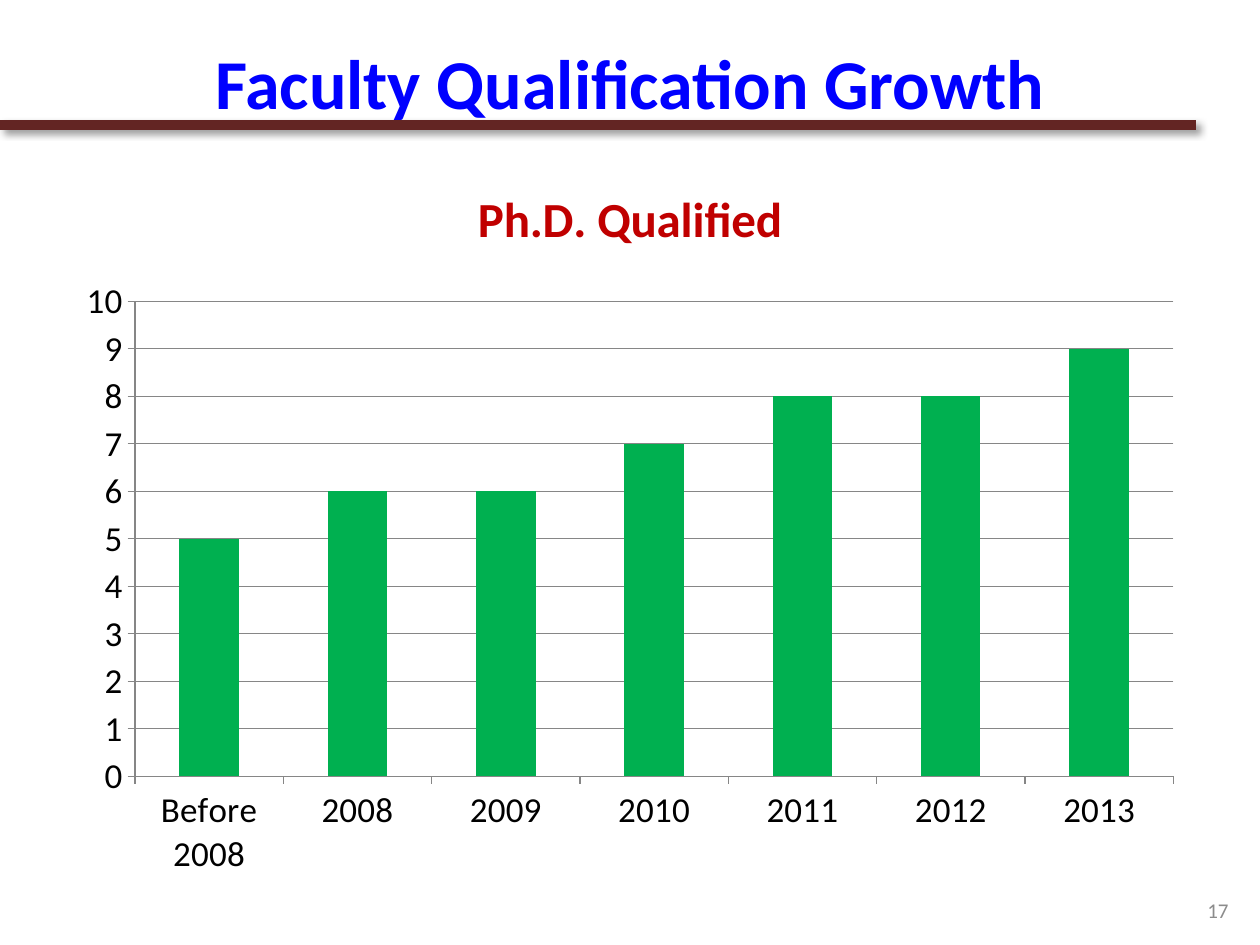
from lxml import etree
from pptx import Presentation
from pptx.chart.data import CategoryChartData
from pptx.dml.color import RGBColor
from pptx.enum.chart import XL_CHART_TYPE, XL_TICK_MARK
from pptx.enum.shapes import MSO_CONNECTOR
from pptx.enum.text import MSO_ANCHOR, PP_ALIGN
from pptx.oxml.ns import qn
from pptx.util import Emu, Pt

COLUMNS = XL_CHART_TYPE.COLUMN_CLUSTERED
OUTSIDE, NO_TICK = XL_TICK_MARK.OUTSIDE, XL_TICK_MARK.NONE
STRAIGHT = MSO_CONNECTOR.STRAIGHT
MIDDLE = MSO_ANCHOR.MIDDLE
CENTER, RIGHT = PP_ALIGN.CENTER, PP_ALIGN.RIGHT

# Content
HEADING = "Faculty Qualification Growth"
CHART_HEADING = "Ph.D. Qualified"
PAGE_NUMBER = "17"
QUALIFIED = {"Before 2008": 5, "2008": 6, "2009": 6, "2010": 7,
             "2011": 8, "2012": 8, "2013": 9}

# Look and places, in px
FONT = "Calibri"
COLORS = {"heading": "0000FF", "rule": "632523", "chart_heading": "C00000",
          "column": "00B050", "label": "000000", "axis": "868686",
          "page": "8C8C8C", "shadow": "000000"}
PX_PER_INCH = 126
SLIDE = (1260, 945)
HEADING_BOX = (63, 38, 1134, 87)
RULE = (0, 125, 1196, 125)
CHART_BOX = (64, 155, 1132, 735)
PAGE_BOX = (948, 890, 293, 40)


def px(*lengths):
    return [Emu(round(n * 914400 / PX_PER_INCH)) for n in lengths]


def color(name):
    return RGBColor.from_string(COLORS[name])


def set_font(font, size, color_name, bold=False):
    values = {"name": FONT, "size": Pt(size), "bold": bold}
    for key, value in values.items():
        setattr(font, key, value)
    font.color.rgb = color(color_name)


def set_text(frame, text, align, size, color_name, bold=False):
    frame.word_wrap = True
    frame.vertical_anchor = MIDDLE
    paragraph = frame.paragraphs[0]
    paragraph.alignment = align
    run = paragraph.add_run()
    run.text = text
    set_font(run.font, size, color_name, bold)


def set_line(line, color_name, width):
    line.color.rgb = color(color_name)
    line.width = Pt(width)


def add_shadow(connector):
    effects = etree.SubElement(connector.element.spPr, qn("a:effectLst"))
    shadow = etree.SubElement(effects, qn("a:outerShdw"), blurRad=str(Pt(4)),
                              dist=str(Pt(3)), dir=str(45 * 60000),
                              algn="tl", rotWithShape="0")
    tint = etree.SubElement(shadow, qn("a:srgbClr"), val=COLORS["shadow"])
    etree.SubElement(tint, qn("a:alpha"), val="40000")


prs = Presentation()
prs.slide_width, prs.slide_height = px(*SLIDE)
slide = prs.slides.add_slide(prs.slide_layouts[5])

# Heading
heading = slide.shapes.title
heading.left, heading.top, heading.width, heading.height = px(*HEADING_BOX)
set_text(heading.text_frame, HEADING, CENTER, 40, "heading", True)

# Rule behind the heading
rule = slide.shapes.add_connector(STRAIGHT, *px(*RULE))
set_line(rule.line, "rule", 6)
add_shadow(rule)
heading.element.addprevious(rule.element)

# Column chart
data = CategoryChartData()
data.categories = list(QUALIFIED)
data.add_series("Series 1", list(QUALIFIED.values()))
chart = slide.shapes.add_chart(COLUMNS, *px(*CHART_BOX), data).chart
set_font(chart.font, 10, "label")
chart.has_legend = False
chart_title = chart.chart_title
chart_title.include_in_layout = False
title_run = chart_title.text_frame.paragraphs[0].add_run()
title_run.text = CHART_HEADING
set_font(title_run.font, 28, "chart_heading", True)

plot = chart.plots[0]
plot.vary_by_categories = False
plot.gap_width = 150
column_fill = plot.series[0].format.fill
column_fill.solid()
column_fill.fore_color.rgb = color("column")

for axis in (chart.category_axis, chart.value_axis):
    axis.major_tick_mark = OUTSIDE
    axis.minor_tick_mark = NO_TICK
    set_font(axis.tick_labels.font, 20, "label")
    set_line(axis.format.line, "axis", 0.75)

scale = {"minimum_scale": 0, "maximum_scale": 10, "major_unit": 1,
         "has_major_gridlines": True}
for key, value in scale.items():
    setattr(chart.value_axis, key, value)
set_line(chart.value_axis.major_gridlines.format.line, "axis", 0.75)

# Page number
page = slide.shapes.add_textbox(*px(*PAGE_BOX))
set_text(page.text_frame, PAGE_NUMBER, RIGHT, 12, "page")

prs.save("out.pptx")
